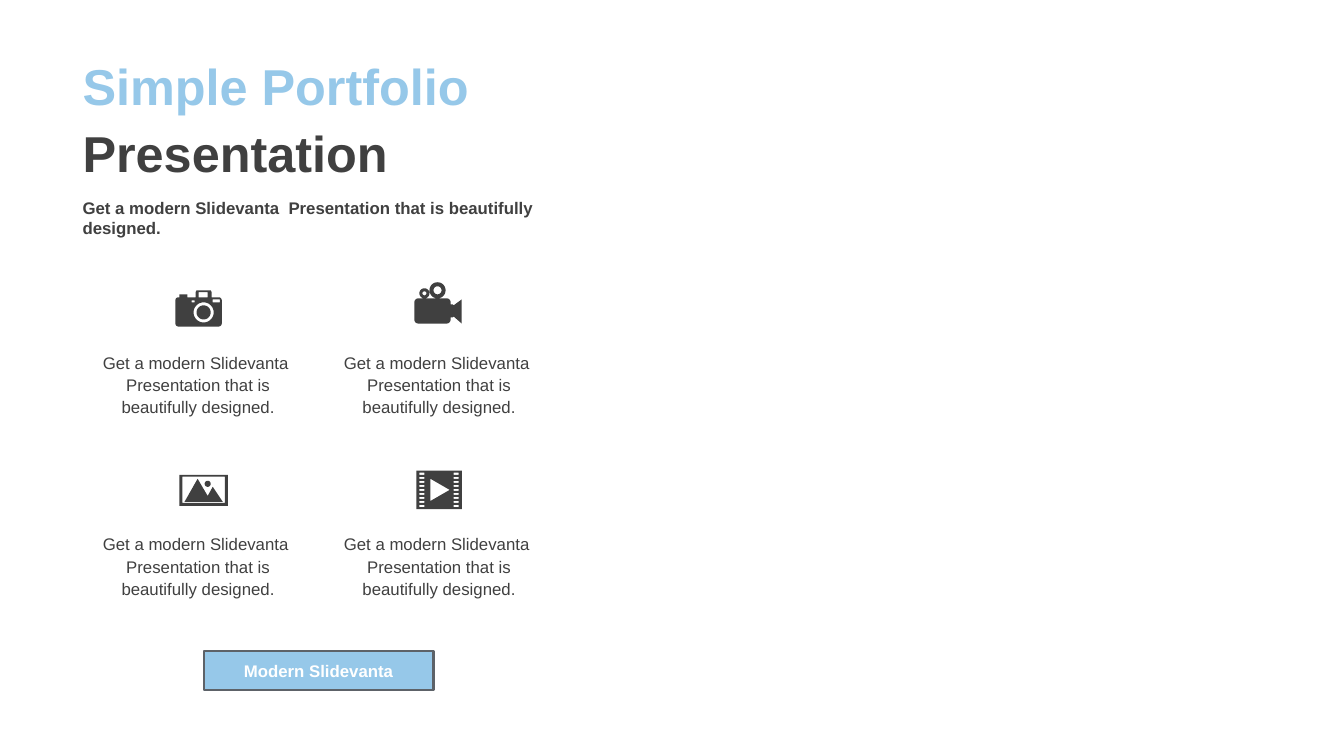
from dataclasses import dataclass
from math import cos, radians, sin

from pptx import Presentation
from pptx.dml.color import RGBColor
from pptx.enum.shapes import MSO_SHAPE
from pptx.enum.text import MSO_ANCHOR, MSO_AUTO_SIZE, PP_ALIGN
from pptx.util import Inches, Pt


@dataclass(frozen=True)
class Theme:
    font: str = "Arial"
    blue: RGBColor = RGBColor(0x96, 0xC8, 0xE9)
    dark: RGBColor = RGBColor(0x40, 0x40, 0x40)
    border: RGBColor = RGBColor(0x5D, 0x62, 0x68)
    white: RGBColor = RGBColor(0xFF, 0xFF, 0xFF)
    title_size: Pt = Pt(36)
    body_size: Pt = Pt(12)


theme = Theme()


def arc(center_x, center_y, radius, start=0, end=360):
    return [
        (center_x + radius * cos(radians(angle)), center_y + radius * sin(radians(angle)))
        for angle in range(start, end + 1, 10)
    ]


def write(shape, runs, size, bold=False, align=PP_ALIGN.LEFT, spacing=1.0, before=0):
    shape.text_frame.word_wrap = True
    paragraph = shape.text_frame.paragraphs[0]
    paragraph.alignment = align
    paragraph.line_spacing = spacing
    paragraph.space_before = Pt(before)
    paragraph.font.name = theme.font
    paragraph.font.size = size
    paragraph.font.bold = bold
    for text, color in runs:
        run = paragraph.add_run()
        run.text = text
        run.font.color.rgb = color


presentation = Presentation()
presentation.slide_width = Inches(13.33)
presentation.slide_height = Inches(7.5)
slide = presentation.slides.add_slide(presentation.slide_layouts[6])

title = slide.shapes.add_textbox(Inches(0.72), Inches(0.52), Inches(4.58), Inches(1.26))
title.text_frame.vertical_anchor = MSO_ANCHOR.MIDDLE
title_runs = [("Simple Portfolio ", theme.blue), ("Presentation", theme.dark)]
write(title, title_runs, theme.title_size, bold=True, spacing=1.1, before=7.2)

tagline = [("Get a modern Slidevanta  Presentation that is beautifully designed.", theme.dark)]
subtitle = slide.shapes.add_textbox(Inches(0.72), Inches(1.91), Inches(4.92), Inches(0.5))
subtitle.text_frame.auto_size = MSO_AUTO_SIZE.SHAPE_TO_FIT_TEXT
write(subtitle, tagline, theme.body_size, bold=True)

for top in (3.43, 5.23):
    for left in (0.81, 3.2):
        caption = slide.shapes.add_textbox(Inches(left), Inches(top), Inches(2.31), Inches(0.77))
        caption.text_frame.auto_size = MSO_AUTO_SIZE.SHAPE_TO_FIT_TEXT
        write(caption, tagline, theme.body_size, align=PP_ALIGN.CENTER, spacing=1.1)

button = slide.shapes.add_shape(
    MSO_SHAPE.RECTANGLE, Inches(2.02), Inches(6.46), Inches(2.28), Inches(0.39)
)
button.shadow.inherit = False
button.fill.solid()
button.fill.fore_color.rgb = theme.blue
button.line.color.rgb = theme.border
button.line.width = Pt(1.5)
button.text_frame.vertical_anchor = MSO_ANCHOR.MIDDLE
button_runs = [("Modern Slidevanta", theme.white)]
write(button, button_runs, theme.body_size, bold=True, align=PP_ALIGN.CENTER, before=2.4)

camera_body = [
    *arc(1.77, 2.98, 0.03, 180, 270),
    (1.78, 2.95), (1.78, 2.92), (1.86, 2.92), (1.86, 2.95),
    (1.94, 2.95), (1.94, 2.9), (1.95, 2.88), (2.09, 2.88), (2.1, 2.9), (2.1, 2.95),
    *arc(2.17, 2.98, 0.03, 270, 360),
    *arc(2.17, 3.21, 0.03, 0, 90),
    *arc(1.77, 3.21, 0.03, 90, 180),
]
camcorder_body = [
    *arc(4.15, 3, 0.04, 180, 270),
    *arc(4.43, 3, 0.04, 270, 360),
    (4.47, 3.02), (4.49, 3.02), (4.5, 3.03), (4.58, 2.97),
    (4.58, 3.21), (4.5, 3.14), (4.49, 3.15), (4.47, 3.15),
    *arc(4.43, 3.17, 0.04, 0, 90),
    *arc(4.15, 3.17, 0.04, 90, 180),
]
mountains = [(1.96, 4.75), (2.06, 4.92), (2.11, 4.83), (2.21, 4.98), (1.83, 4.98)]
play_mark = [(4.27, 4.75), (4.46, 4.86), (4.27, 4.97)]
film_holes = [
    (left, 4.69 + 0.04 * row, left + 0.05, 4.71 + 0.04 * row)
    for left in (4.16, 4.5)
    for row in range(9)
]

icons = [
    (
        [camera_body, arc(2.02, 3.1, 0.1), arc(2.02, 3.1, 0.07)],
        [(1.9, 2.98, 1.93, 3), (2.11, 2.97, 2.18, 3), (1.97, 2.9, 2.06, 2.95)],
    ),
    (
        [
            camcorder_body,
            arc(4.34, 2.88, 0.08), arc(4.34, 2.88, 0.04),
            arc(4.21, 2.91, 0.05), arc(4.21, 2.91, 0.02),
        ],
        [],
    ),
    (
        [mountains, arc(2.06, 4.8, 0.03)],
        [(1.78, 4.71, 2.26, 5.02), (1.81, 4.73, 2.23, 4.99)],
    ),
    ([play_mark], [(4.13, 4.67, 4.58, 5.05), *film_holes]),
]

for outlines, boxes in icons:
    rectangles = [
        [(left, top), (right, top), (right, bottom), (left, bottom)]
        for left, top, right, bottom in boxes
    ]
    contours = [[(Inches(x), Inches(y)) for x, y in points] for points in outlines + rectangles]
    builder = slide.shapes.build_freeform(*contours[0][0])
    builder.add_line_segments(contours[0][1:], close=True)
    for first, *others in contours[1:]:
        builder.move_to(*first)
        builder.add_line_segments(others, close=True)
    icon = builder.convert_to_shape()
    icon.shadow.inherit = False
    icon.fill.solid()
    icon.fill.fore_color.rgb = theme.dark
    icon.line.fill.background()

presentation.save("out.pptx")
